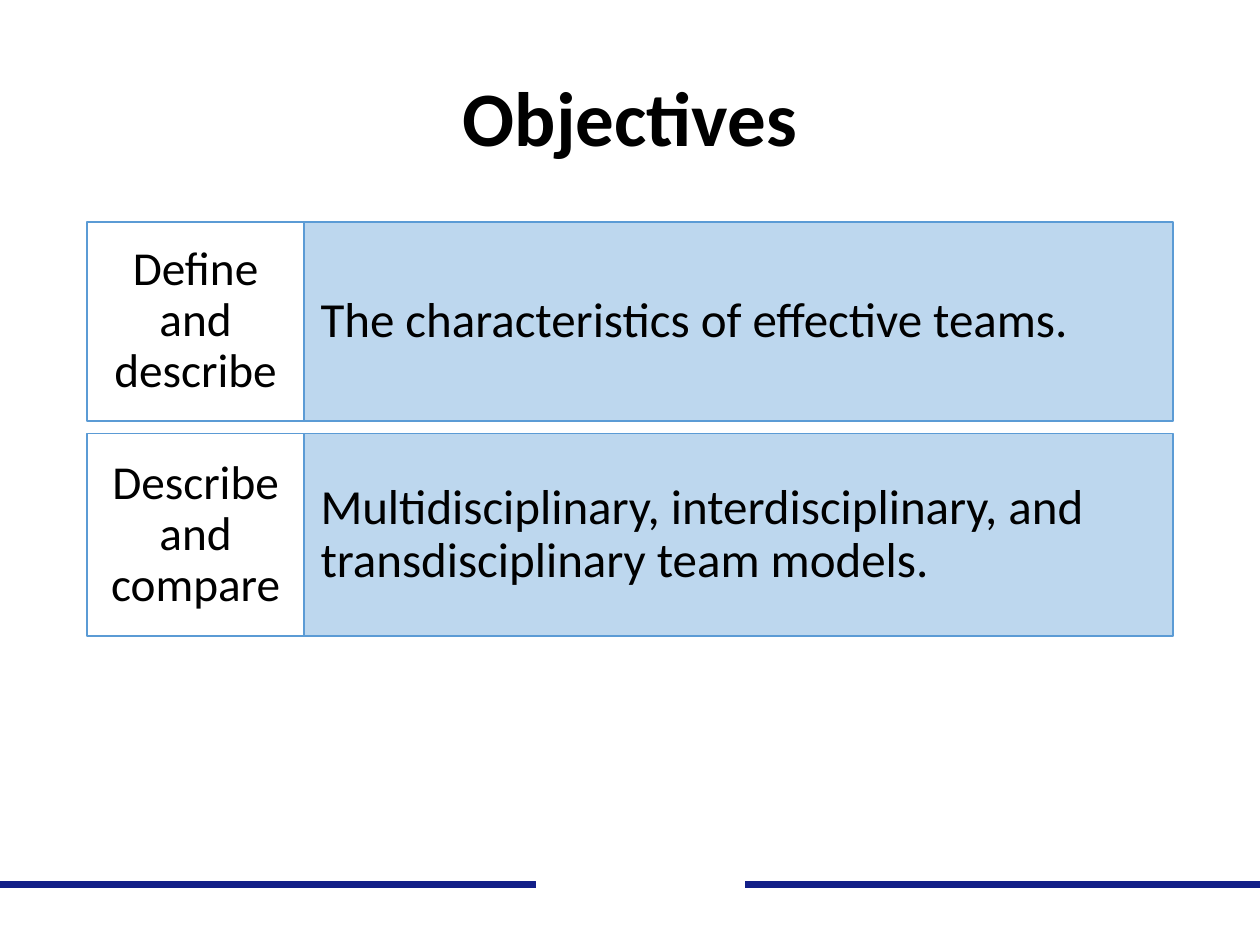
from pptx import Presentation
from pptx.dml.color import RGBColor
from pptx.enum.shapes import MSO_CONNECTOR, MSO_SHAPE
from pptx.enum.text import MSO_ANCHOR, PP_ALIGN
from pptx.oxml.ns import qn
from pptx.util import Inches, Pt
from lxml.etree import SubElement

TITLE = "Objectives"
OBJECTIVES = [
    ("Define and describe", "The characteristics of effective teams.", 1.76, 1.58),
    ("Describe and compare",
     "Multidisciplinary, interdisciplinary, and transdisciplinary team models.", 3.44, 1.61),
]
NAVY = RGBColor(0x12, 0x1F, 0x88)
WHITE = RGBColor(0xFF, 0xFF, 0xFF)
BLACK = RGBColor(0x00, 0x00, 0x00)
PALE_BLUE = RGBColor(0xBD, 0xD7, 0xEE)
BLUE = RGBColor(0x5B, 0x9B, 0xD5)
FOOTER_LINES = [(0, 10, NAVY), (4.25, 5.91, WHITE)]
FOOTER_TOP = 7.02
LEFT, WIDTH = 0.69, 8.62
LABEL_WIDTH = WIDTH / 5


def write_text(shape, text, size, align=PP_ALIGN.CENTER, bold=False, margins=(0.1, 0.05)):
    frame = shape.text_frame
    frame.word_wrap = True
    frame.vertical_anchor = MSO_ANCHOR.MIDDLE
    frame.margin_left = frame.margin_right = Inches(margins[0])
    frame.margin_top = frame.margin_bottom = Inches(margins[1])
    paragraph = frame.paragraphs[0]
    paragraph.alignment = align
    paragraph.line_spacing = 0.9
    run = paragraph.add_run()
    run.text = text
    run.font.name = "Calibri"
    run.font.size = Pt(size)
    run.font.bold = bold
    run.font.color.rgb = BLACK


def add_panel(slide, left, top, width, height, fill):
    shape = slide.shapes.add_shape(
        MSO_SHAPE.RECTANGLE, Inches(left), Inches(top), Inches(width), Inches(height))
    shape.shadow.inherit = False
    shape.fill.solid()
    shape.fill.fore_color.rgb = fill
    shape.line.color.rgb = BLUE
    shape.line.width = Pt(1)
    return shape


def add_footer_line(slide, start, end, color):
    connector = slide.shapes.add_connector(
        MSO_CONNECTOR.STRAIGHT, Inches(start), Inches(FOOTER_TOP), Inches(end), Inches(FOOTER_TOP))
    connector.line.color.rgb = color
    connector.line.width = Pt(4.5)
    SubElement(connector._element.spPr, qn("a:effectLst"))


def main():
    presentation = Presentation()
    presentation.slide_width = Inches(10)
    presentation.slide_height = Inches(7.5)
    slide = presentation.slides.add_slide(presentation.slide_layouts[6])

    for start, end, color in FOOTER_LINES:
        add_footer_line(slide, start, end, color)

    title = slide.shapes.add_textbox(Inches(LEFT), Inches(0.24), Inches(WIDTH), Inches(1.45))
    write_text(title, TITLE, 44, bold=True)

    for label, description, top, height in OBJECTIVES:
        panel = add_panel(
            slide, LEFT + LABEL_WIDTH, top, WIDTH - LABEL_WIDTH, height, PALE_BLUE)
        write_text(panel, description, 28, align=PP_ALIGN.LEFT, margins=(0.13, 0.41))
        panel = add_panel(slide, LEFT, top, LABEL_WIDTH, height, WHITE)
        write_text(panel, label, 27, margins=(0.09, 0.16))

    presentation.save("out.pptx")


if __name__ == "__main__":
    main()
